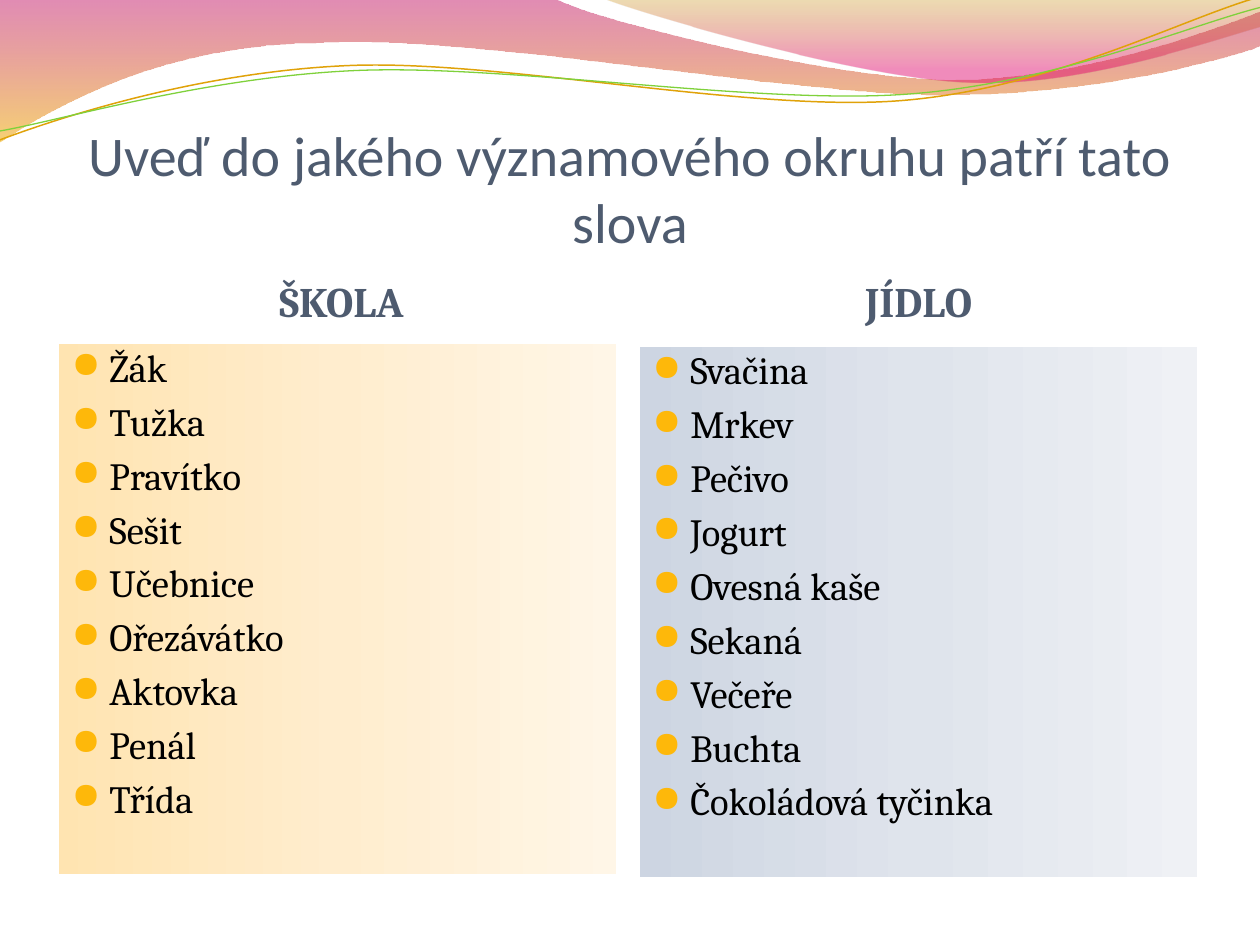
from math import cos, radians, sin

from lxml.etree import SubElement
from pptx import Presentation
from pptx.dml.color import RGBColor
from pptx.enum.text import MSO_ANCHOR, PP_ALIGN
from pptx.oxml.ns import qn
from pptx.util import Inches, Pt

COLORS = {
    "slate": "4E5B6F", "black": "000000", "bullet": "FEB80A",
    "wine": "BD0059", "amber": "F0AB00", "ochre": "C38B00", "pink": "E1006B",
    "gold": "E0A209", "green": "7FD13B",
    "sand": "FFE4B1", "cream": "FFEDCE", "ivory": "FFF6E7",
    "steel": "CDD5E2", "mist": "DFE4EC", "pale": "EFF1F5",
}
TILT = 2.7

prs = Presentation()
prs.slide_width, prs.slide_height = Inches(10), Inches(7.5)
slide = prs.slides.add_slide(prs.slide_layouts[6])


def trace(parts, close):
    """Draw a freeform; a part of 2 numbers is a point, one of 6 a Bezier curve."""
    dots = [part[i:i + 2] for part in parts for i in range(0, len(part), 2)]
    pen = slide.shapes.build_freeform(*map(Inches, dots[0]))
    pen.add_line_segments([(Inches(x), Inches(y)) for x, y in dots[1:]], close=close)
    shape = pen.convert_to_shape()
    shape.shadow.inherit = False
    # Join each run of three segments that stands for a curve
    lines = iter(list(shape._element.iter(qn("a:lnTo"))))
    for part in parts[1:]:
        first = next(lines)
        if len(part) == 6:
            curve = first.makeelement(qn("a:cubicBezTo"))
            first.addprevious(curve)
            for line in (first, next(lines), next(lines)):
                curve.append(line[0])
                line.getparent().remove(line)
    return shape


def shade(shape, stops, angle):
    """Fill with a gradient; stops are (position %, colour name, opacity %)."""
    shape.fill.gradient()
    grad = shape.fill._xPr.find(qn("a:gradFill"))
    for child in list(grad):
        grad.remove(child)
    group = SubElement(grad, qn("a:gsLst"))
    for pos, name, alpha in stops:
        stop = SubElement(group, qn("a:gs"), pos=str(pos * 1000))
        color = SubElement(stop, qn("a:srgbClr"), val=COLORS[name])
        if alpha < 100:
            SubElement(color, qn("a:alpha"), val=str(alpha * 1000))
    SubElement(grad, qn("a:lin"), ang=str(angle * 60000), scaled="0")


# Waves along the top
waves = [
    ([(0, -0.01), (4.4, -0.01), (4.76, 0.17, 6.64, 0.63, 7.58, 0.63),
      (8.53, 0.63, 9.58, 0.26, 10, 0.09), (10.01, 0.36),
      (9.83, 0.44, 8.7, 0.76, 7.46, 0.75), (6.22, 0.75, 3.82, 0.28, 2.57, 0.34),
      (1.29, 0.35, 0.46, 0.83, -0.01, 1.13)],
     [(0, "wine", 45), (100, "amber", 55)]),
    ([(4.79, -0.01), (5.09, 0.11, 6.82, 0.62, 7.69, 0.65),
      (8.56, 0.69, 9.61, 0.32, 10, 0.21), (10, 0)],
     [(0, "ochre", 30), (80, "pink", 45)]),
]
for parts, stops in waves:
    wave = trace(parts, True)
    shade(wave, stops, 90)
    wave.line.fill.background()

# Tilted strands: points as seen, turned level around the middle, then rotated
strands = [
    ([(0, 1.11), (0.48, 0.93, 1.58, 0.57, 2.77, 0.52),
      (3.95, 0.47, 5.93, 0.89, 7.13, 0.8), (8.33, 0.71, 9.38, 0.15, 9.98, -0.02)],
     (4.99, 0.58), "gold", 0.85),
    ([(0, 1.04), (0.47, 0.96, 1.64, 0.61, 2.83, 0.56),
      (4.03, 0.51, 5.97, 0.83, 7.17, 0.75), (8.36, 0.67, 9.41, 0.21, 10, 0.06)],
     (5, 0.59), "green", 0.75),
]
c, s = cos(radians(TILT)), sin(radians(TILT))
for parts, (mx, my), name, width in strands:
    level = []
    for part in parts:
        turned = []
        for x, y in zip(part[::2], part[1::2]):
            dx, dy = x - mx, y - my
            turned += [mx + dx * c - dy * s, my + dx * s + dy * c]
        level.append(turned)
    strand = trace(level, False)
    strand.rotation = 360 - TILT
    strand.fill.background()
    strand.line.color.rgb = RGBColor.from_string(COLORS[name])
    strand.line.width = Pt(width)

# Title, headings and word lists
school = ["Žák", "Tužka", "Pravítko", "Sešit", "Učebnice", "Ořezávátko",
          "Aktovka", "Penál", "Třída"]
food = ["Svačina", "Mrkev", "Pečivo", "Jogurt", "Ovesná kaše", "Sekaná",
        "Večeře", "Buchta", "Čokoládová tyčinka"]
title = ["Uveď do jakého významového okruhu patří tato slova"]
top, mid, low = MSO_ANCHOR.TOP, MSO_ANCHOR.MIDDLE, MSO_ANCHOR.BOTTOM

# place, lines, font, size, colour, anchor, insets, gradient
boxes = [
    ((0.5, 0.77, 9, 1.25), title, "Calibri", 32, "slate", low, (0, 0.05, 0, 0), None),
    ((0.5, 2.03, 4.42, 0.72), ["ŠKOLA"], "Cambria", 24, "slate", mid,
     (0.05, 0, 0.05, 0), None),
    ((5.08, 2.03, 4.42, 0.72), ["JÍDLO"], "Cambria", 24, "slate", mid,
     (0.05, 0, 0.05, 0), None),
    ((0.47, 2.73, 4.42, 4.21), school, "Cambria", 22, "black", top,
     (0.1, 0, 0.1, 0.05), ("sand", "cream", "ivory")),
    ((5.08, 2.75, 4.42, 4.21), food, "Cambria", 22, "black", top,
     (0.1, 0, 0.1, 0.05), ("steel", "mist", "pale")),
]
for place, lines, font, size, color, anchor, insets, tints in boxes:
    box = slide.shapes.add_textbox(*map(Inches, place))
    frame = box.text_frame
    frame.word_wrap = True
    frame.vertical_anchor = anchor
    (frame.margin_left, frame.margin_top,
     frame.margin_right, frame.margin_bottom) = map(Inches, insets)
    frame.text = "\n".join(lines)
    if tints:
        shade(box, [(50 * i, tint, 100) for i, tint in enumerate(tints)], 0)
    for para in frame.paragraphs:
        run = para.runs[0].font
        run.name, run.size = font, Pt(size)
        run.bold = anchor == mid
        run.color.rgb = RGBColor.from_string(COLORS[color])
        if not tints:
            para.alignment = PP_ALIGN.CENTER
            continue
        para.space_before = Pt(size * 0.2)
        props = para._p.get_or_add_pPr()
        props.set("marL", str(Inches(0.3)))
        props.set("indent", str(-Inches(0.3)))
        tone = SubElement(props, qn("a:buClr"))
        SubElement(tone, qn("a:srgbClr"), val=COLORS["bullet"])
        SubElement(props, qn("a:buSzPct"), val="95000")
        SubElement(props, qn("a:buFont"), typeface="OpenSymbol")
        SubElement(props, qn("a:buChar"), char="●")

prs.save("out.pptx")
